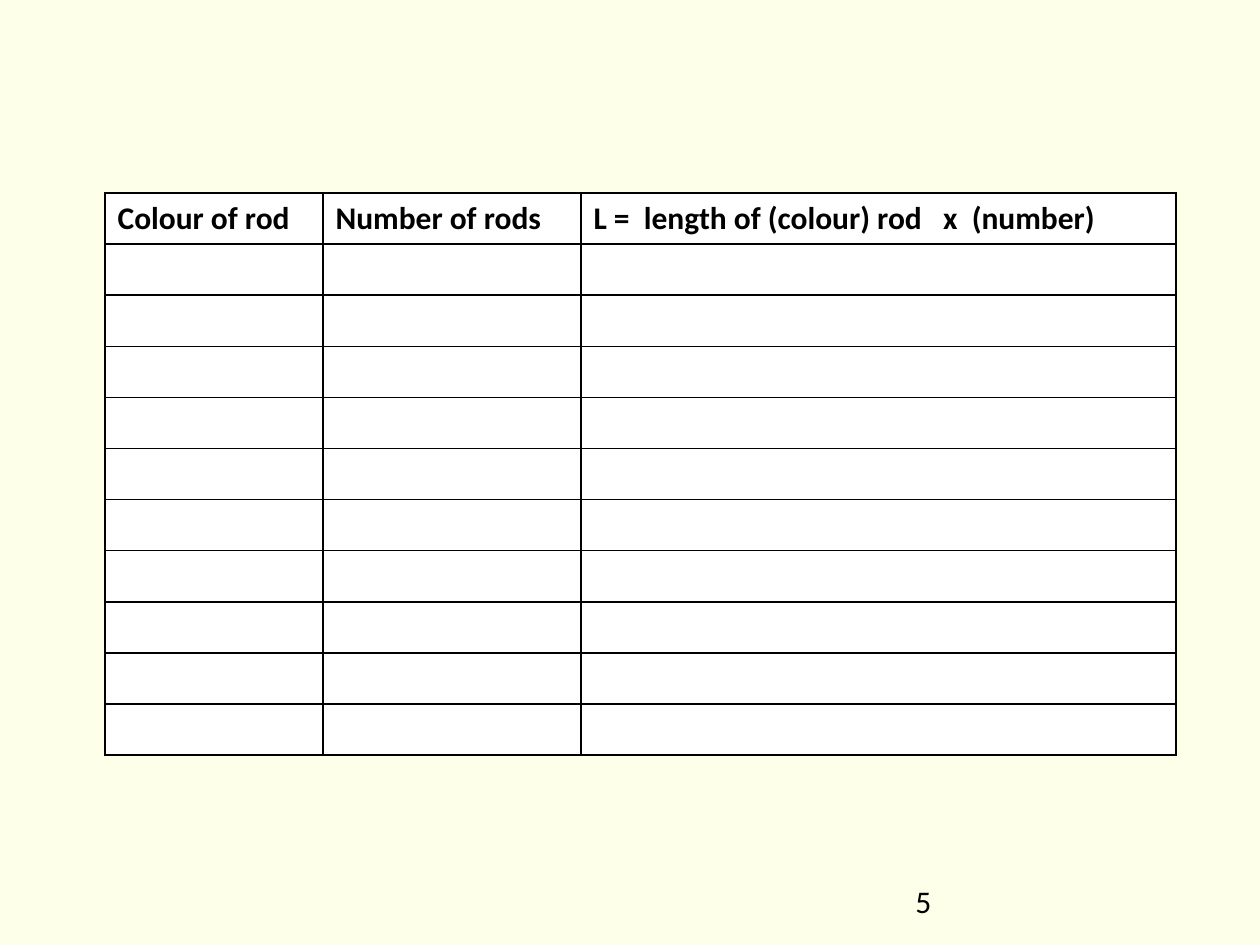
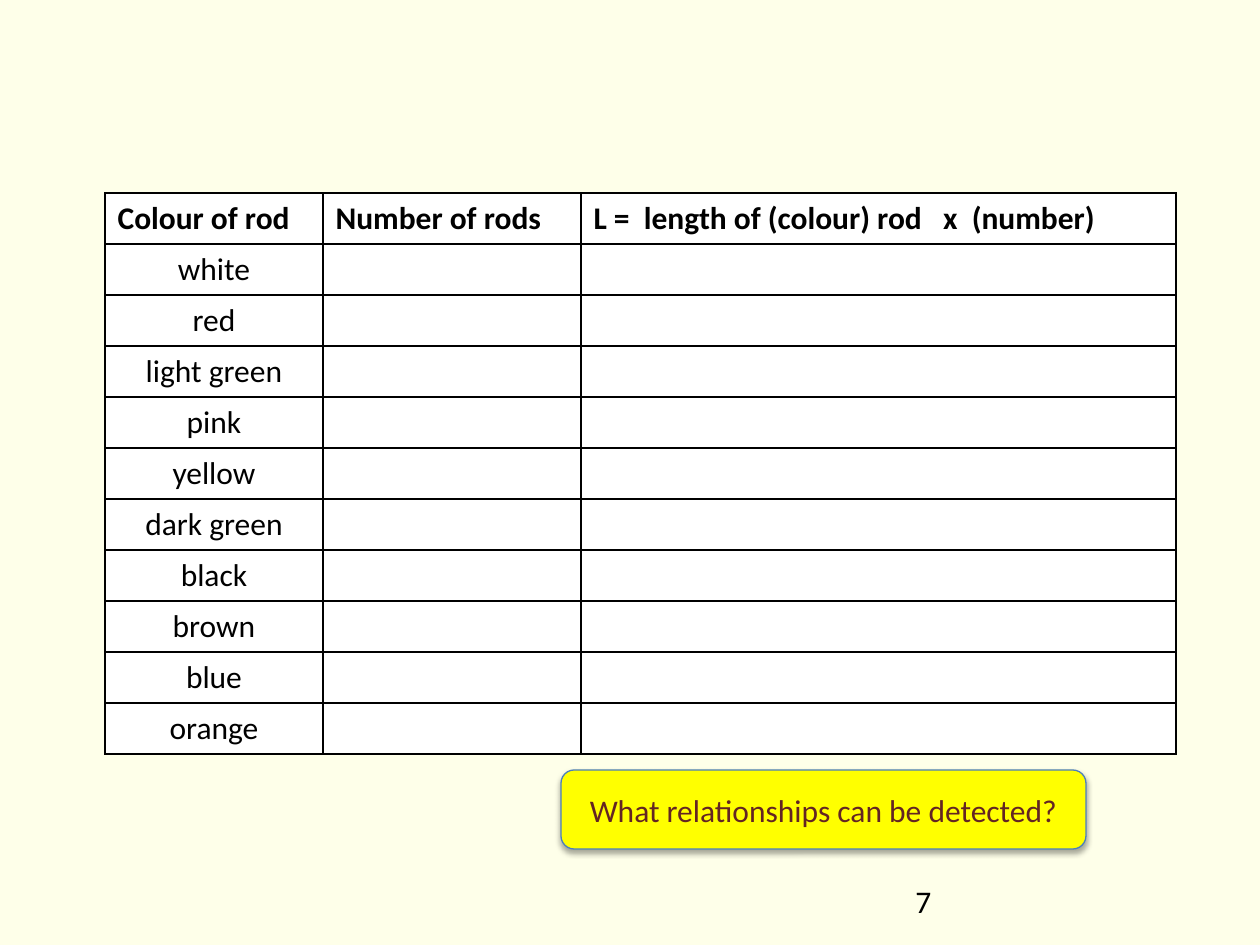
import lxml.etree
import pptx
import pptx.dml.color
import pptx.enum.shapes
import pptx.enum.text
import pptx.oxml
import pptx.oxml.ns
import pptx.util

EMU_PER_PX = 914400 / 126
FONT = "Calibri"
BACKGROUND, WHITE, BLACK = "FEFFE9", "FFFFFF", "000000"
YELLOW, BLUE, MAROON = "FFFF00", "4B7EBC", "632523"
CENTER = pptx.enum.text.PP_ALIGN.CENTER
MIDDLE = pptx.enum.text.MSO_ANCHOR.MIDDLE
A = pptx.oxml.ns.nsdecls("a")

HEADERS = ["Colour of rod", "Number of rods",
           "L =  length of (colour) rod   x  (number)"]
RODS = ["white", "red", "light green", "pink", "yellow",
        "dark green", "black", "brown", "blue", "orange"]
COLUMN_WIDTHS = [218, 258, 595]
ROW_HEIGHT = 51

# Page number, first-column entries and question of each slide
SLIDES = [
    ("5", [""] * len(RODS), None),
    ("7", RODS, "What relationships can be detected?"),
]


def px(*lengths):
    return [pptx.util.Emu(round(n * EMU_PER_PX)) for n in lengths]


def rgb(color):
    return pptx.dml.color.RGBColor.from_string(color)


prs = pptx.Presentation()
prs.slide_width, prs.slide_height = px(1260, 945)

for number, entries, question in SLIDES:
    s = prs.slides.add_slide(prs.slide_layouts[6])
    s.background.fill.solid()
    s.background.fill.fore_color.rgb = rgb(BACKGROUND)
    texts = []  # text frame, text, colour, bold, alignment

    # Rod table
    rows = [HEADERS] + [[entry, "", ""] for entry in entries]
    table = s.shapes.add_table(
        len(rows), len(HEADERS),
        *px(105, 193, sum(COLUMN_WIDTHS), ROW_HEIGHT * len(rows))).table
    for column, width in zip(table.columns, px(*COLUMN_WIDTHS)):
        column.width = width
    for i, row in enumerate(rows):
        table.rows[i].height = px(ROW_HEIGHT)[0]
        for j, text in enumerate(row):
            cell = table.cell(i, j)
            # Borders come before the fill in the cell properties
            tcPr = cell._tc.get_or_add_tcPr()
            for side in ("lnL", "lnR", "lnT", "lnB"):
                tcPr.append(pptx.oxml.parse_xml(
                    f'<a:{side} {A} w="12700"><a:solidFill>'
                    f'<a:srgbClr val="{BLACK}"/></a:solidFill></a:{side}>'))
            cell.fill.solid()
            cell.fill.fore_color.rgb = rgb(WHITE)
            if text:
                header = i == 0
                texts.append((cell.text_frame, text, BLACK, header,
                              None if header else CENTER))

    # Question box with a soft shadow
    if question:
        sp = s.shapes.add_shape(
            pptx.enum.shapes.MSO_SHAPE.ROUNDED_RECTANGLE, *px(561, 770, 525, 79))
        sp.fill.solid()
        sp.fill.fore_color.rgb = rgb(YELLOW)
        sp.line.color.rgb = rgb(BLUE)
        sp.line.width = pptx.util.Pt(0.75)
        sp.shadow.inherit = False
        effects = sp._element.spPr.find(pptx.oxml.ns.qn("a:effectLst"))
        effects.append(pptx.oxml.parse_xml(
            f'<a:outerShdw {A} blurRad="39400" dist="22900" dir="5400000" '
            f'rotWithShape="0"><a:srgbClr val="{BLACK}">'
            f'<a:alpha val="35000"/></a:srgbClr></a:outerShdw>'))
        sp.text_frame.vertical_anchor = MIDDLE
        texts.append((sp.text_frame, question, MAROON, False, CENTER))

    # Page number
    box = s.shapes.add_textbox(*px(903, 876, 294, 50))
    texts.append((box.text_frame, number, BLACK, False, None))

    # Shared text style
    for tf, text, color, bold, alignment in texts:
        tf.word_wrap = True
        p = tf.paragraphs[0]
        p.alignment = alignment
        r = p.add_run()
        r.text = text
        r.font.name = FONT
        r.font.size = pptx.util.Pt(18)
        r.font.bold = bold
        r.font.color.rgb = rgb(color)

prs.save("out.pptx")
